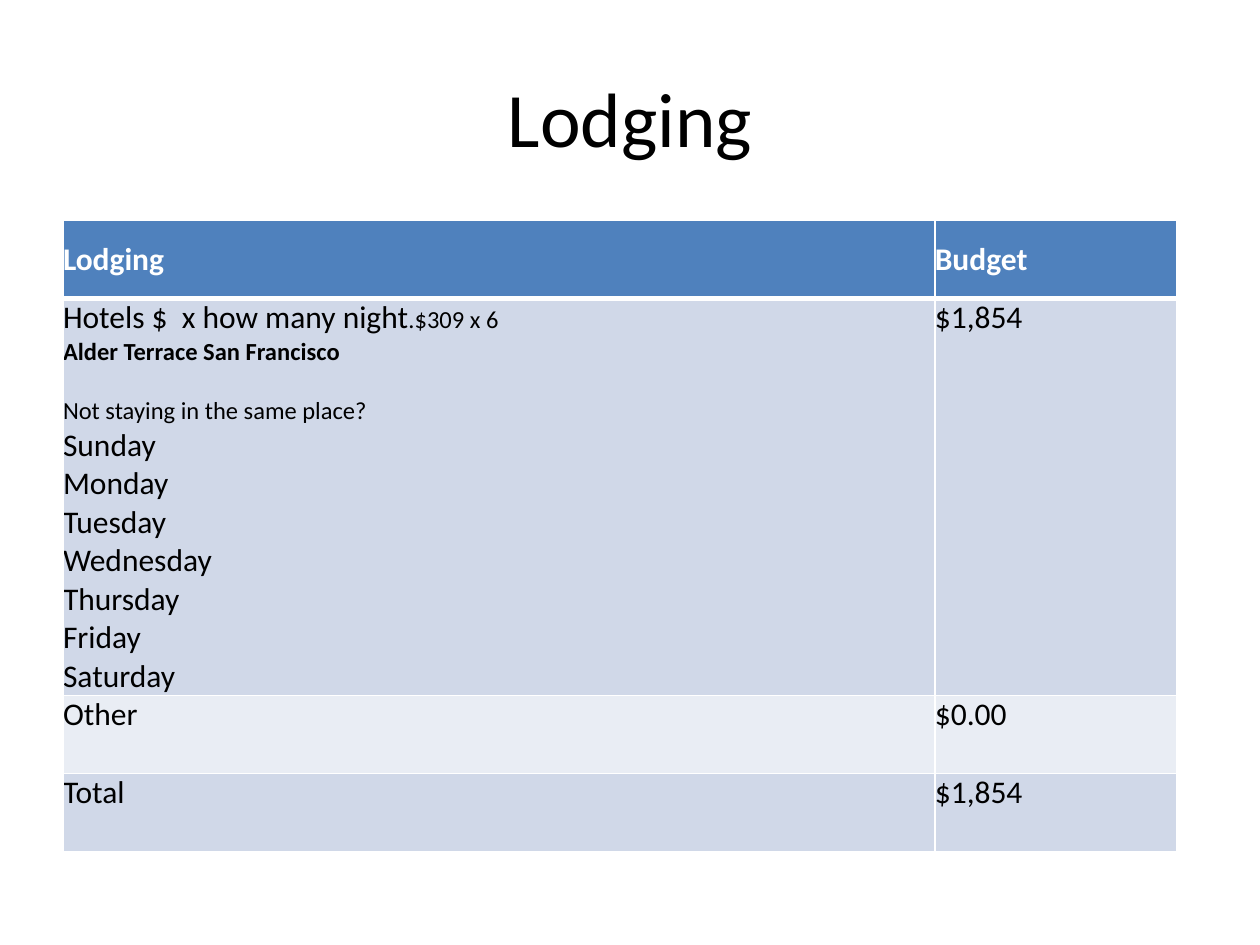
"""Build the lodging budget slide."""
from typing import NamedTuple

from lxml.etree import SubElement
from pptx import Presentation
from pptx.dml.color import RGBColor
from pptx.enum.text import MSO_ANCHOR, PP_ALIGN
from pptx.oxml.ns import qn
from pptx.util import Inches, Pt

BLACK = RGBColor(0x00, 0x00, 0x00)
WHITE = RGBColor(0xFF, 0xFF, 0xFF)
BLUE = RGBColor(0x4F, 0x81, 0xBD)
DARK = RGBColor(0xD0, 0xD8, 0xE8)
LIGHT = RGBColor(0xE9, 0xED, 0xF4)

DAYS = ("Sunday", "Monday", "Tuesday", "Wednesday", "Thursday", "Friday", "Saturday")
WIDTHS = (6.92, 1.92)


class Run(NamedTuple):
    text: str
    size: int = 18
    bold: bool = False


class Line(NamedTuple):
    runs: tuple[Run, ...]
    gap: int = 0


class Row(NamedTuple):
    label: list[Line]
    cost: list[Line]
    fill: RGBColor
    height: float = 0.62
    head: bool = False
    top: int = 1


def plain(text: str, size: int = 18, bold: bool = False, gap: int = 0) -> Line:
    return Line((Run(text, size, bold),), gap)


STAY = [
    Line((Run("Hotels $  x how many night"), Run(".$309 x 6", 14))),
    plain("Alder Terrace San Francisco", 14, True),
    plain("Not staying in the same place?", 14, gap=17),
    *(plain(day) for day in DAYS),
]
ROWS = (
    Row([plain("Lodging", bold=True)], [plain("Budget", bold=True)], BLUE, head=True),
    Row(STAY, [plain("$1,854")], DARK, height=3.15, top=3),
    Row([plain("Other")], [plain("$0.00")], LIGHT),
    Row([plain("Total")], [plain("$1,854")], DARK),
)


def write(para, text: str, *, size: int = 18, bold: bool = False, color: RGBColor = BLACK) -> None:
    run = para.add_run()
    run.text = text
    font = run.font
    font.name = "Calibri"
    font.size = Pt(size)
    font.bold = bold
    font.color.rgb = color


def edge(cell, side: str, width: int) -> None:
    line = SubElement(cell._tc.get_or_add_tcPr(), qn(f"a:ln{side}"), w=str(Pt(width)))
    fill = SubElement(line, qn("a:solidFill"))
    SubElement(fill, qn("a:srgbClr"), val=str(WHITE))


def draw_cell(cell, lines: list[Line], row: Row) -> None:
    widths = {"L": 1, "R": 1, "T": row.top, "B": 3 if row.head else 1}
    for side, width in widths.items():
        edge(cell, side, width)
    cell.fill.solid()
    cell.fill.fore_color.rgb = row.fill
    cell.margin_left = cell.margin_right = cell.margin_top = cell.margin_bottom = 0
    cell.vertical_anchor = MSO_ANCHOR.MIDDLE if row.head else MSO_ANCHOR.TOP
    frame = cell.text_frame
    color = WHITE if row.head else BLACK
    for i, line in enumerate(lines):
        para = frame.add_paragraph() if i else frame.paragraphs[0]
        para.space_before = Pt(line.gap)
        for run in line.runs:
            write(para, run.text, size=run.size, bold=run.bold, color=color)


def draw_title(slide) -> None:
    box = slide.shapes.add_textbox(Inches(0.5), Inches(0.3), Inches(9), Inches(1.25))
    frame = box.text_frame
    frame.word_wrap = True
    frame.vertical_anchor = MSO_ANCHOR.MIDDLE
    para = frame.paragraphs[0]
    para.alignment = PP_ALIGN.CENTER
    write(para, "Lodging", size=44)


def draw_table(slide) -> None:
    height = sum(row.height for row in ROWS)
    table = slide.shapes.add_table(
        len(ROWS), len(WIDTHS), Inches(0.5), Inches(1.75), Inches(sum(WIDTHS)), Inches(height)
    ).table
    for col, width in zip(table.columns, WIDTHS):
        col.width = Inches(width)
    for i, row in enumerate(ROWS):
        table.rows[i].height = Inches(row.height)
        for j, lines in enumerate((row.label, row.cost)):
            draw_cell(table.cell(i, j), lines, row)


def main() -> None:
    deck = Presentation()
    deck.slide_width = Inches(10)
    deck.slide_height = Inches(7.5)
    slide = deck.slides.add_slide(deck.slide_layouts[6])
    draw_title(slide)
    draw_table(slide)
    deck.save("out.pptx")


if __name__ == "__main__":
    main()
